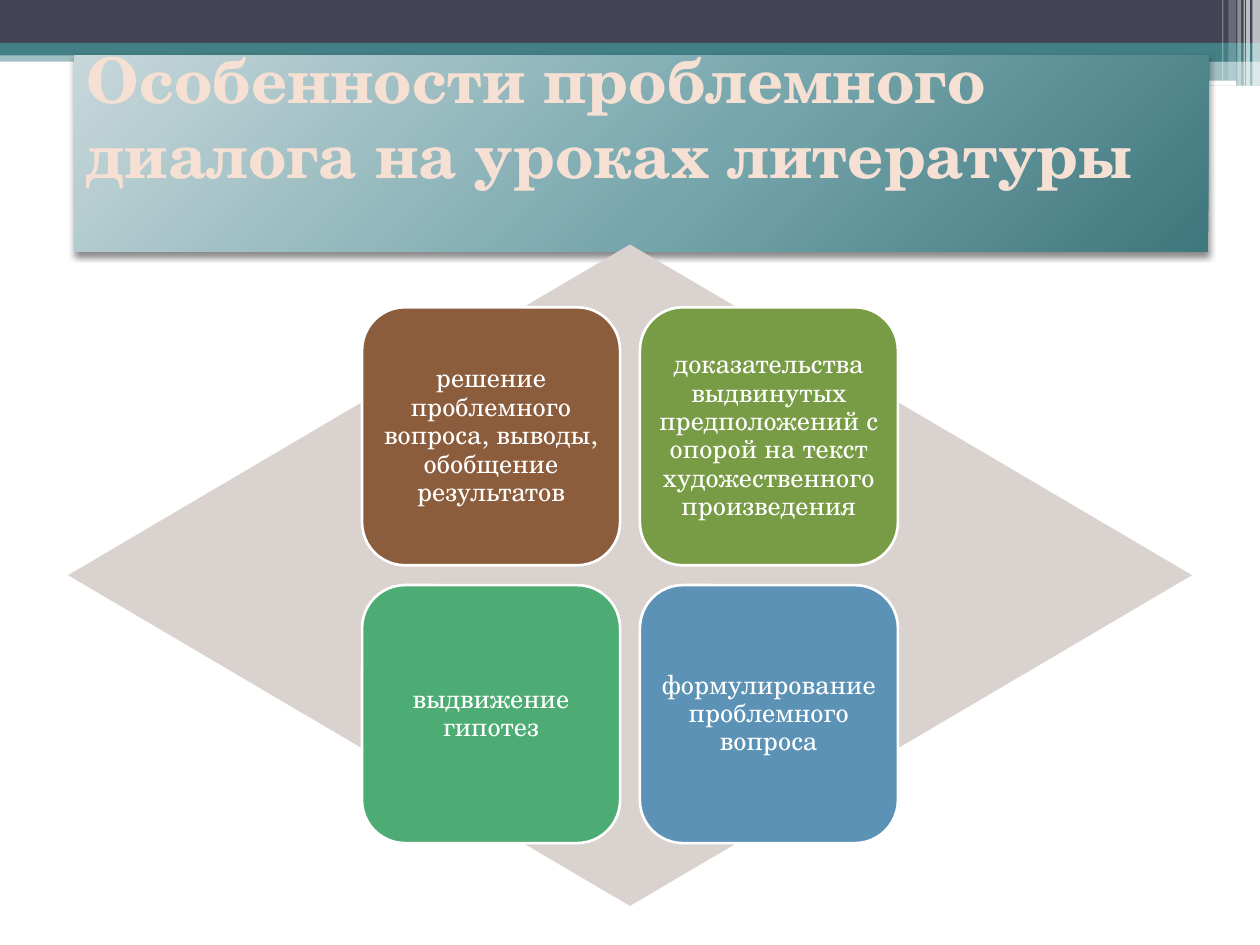
import lxml.etree
import pptx
import pptx.dml.color
import pptx.enum.shapes
import pptx.enum.text
import pptx.oxml
import pptx.oxml.ns
import pptx.util

UNIT = pptx.util.Inches(0.01)
COLUMNS, ROWS = 1000, 750
FONT = "TeX Gyre Schola"
FORMS = pptx.enum.shapes.MSO_SHAPE
ALIGN = pptx.enum.text.PP_ALIGN
MIDDLE = pptx.enum.text.MSO_ANCHOR.MIDDLE
DRAWING = 'xmlns:a="http://schemas.openxmlformats.org/drawingml/2006/main"'

BARS = [
    (0, 40, 1000, 9, "438086", 50, FORMS.RECTANGLE),
    (0, 0, 1000, 34, "424456", 100, FORMS.RECTANGLE),
    (0, 34, 1000, 10, "438086", 100, FORMS.RECTANGLE),
    (592, 39, 408, 10, "438086", 100, FORMS.RECTANGLE),
    (592, 48, 408, 20, "438086", 50, FORMS.RECTANGLE),
    (591, 54, 335, 3, "FFFFFF", 100, FORMS.ROUNDED_RECTANGLE),
    (806, 64, 175, 4, "FFFFFF", 100, FORMS.ROUNDED_RECTANGLE),
]
STRIPES = [(994, 6, 68, 65), (989, 3, 68, 65), (987, 1, 68, 60),
           (982, 3, 68, 40), (975, 6, 64, 20), (970, 1, 64, 30)]
TILES = [
    ("решение проблемного вопроса, выводы, обобщение результатов", "8B5D3D"),
    ("доказательства выдвинутых предположений с опорой на текст "
     "художественного произведения", "789B45"),
    ("выдвижение гипотез", "4DAC73"),
    ("формулирование проблемного вопроса", "5C92B5"),
]


def colour(code):
    """Turn a hex string into a colour."""
    return pptx.dml.color.RGBColor.from_string(code)


def grid(*cells):
    """Turn grid columns and rows into slide lengths."""
    return [round(cell * UNIT) for cell in cells]


def apply(target, values):
    """Set each named attribute of the target."""
    for name, value in values.items():
        setattr(target, name, value)


def add_form(shapes, kind, box, fill, opacity=100):
    """Add a flat, borderless preset shape."""
    form = shapes.add_shape(kind, *grid(*box))
    form.shadow.inherit = False
    form.fill.solid()
    form.fill.fore_color.rgb = colour(fill)
    form.line.fill.background()
    if opacity < 100:
        tint = form.fill._xPr.find(".//" + pptx.oxml.ns.qn("a:srgbClr"))
        alpha = lxml.etree.SubElement(tint, pptx.oxml.ns.qn("a:alpha"))
        alpha.set("val", str(opacity * 1000))
    return form


def write(form, text, frame_format, para_format, font_format, ink):
    """Write one formatted paragraph into a shape."""
    frame = form.text_frame
    apply(frame, frame_format)
    para = frame.paragraphs[0]
    apply(para, para_format)
    span = para.add_run()
    span.text = text
    apply(span.font, font_format)
    span.font.color.rgb = colour(ink)


def build_header(page):
    """Draw the bars across the top and the stripes at the right edge."""
    for left, top, width, height, fill, opacity, kind in BARS:
        add_form(page.shapes, kind, (left, top, width, height), fill, opacity)
    for left, width, height, opacity in STRIPES:
        add_form(page.shapes, FORMS.RECTANGLE, (left, 0, width, height), "FFFFFF", opacity)


def build_title(page, box):
    """Place the title placeholder with its gradient and shadow above the bars."""
    title = page.shapes.title
    page.shapes._spTree.append(title._element)
    apply(title, dict(zip(("left", "top", "width", "height"), grid(*box))))
    stops = "".join(
        f'<a:gs pos="{place * 1000}"><a:srgbClr val="{code}"/></a:gs>'
        for place, code in ((0, "C7D7DA"), (55, "77A7AD"), (100, "3E777D")))
    gradient = (
        f'<a:gradFill {DRAWING} rotWithShape="1"><a:gsLst>{stops}</a:gsLst>'
        '<a:path path="circle"><a:fillToRect l="-40000" t="-90000" r="140000" b="190000"/>'
        '</a:path></a:gradFill>')
    shadow = (
        f'<a:effectLst {DRAWING}><a:outerShdw blurRad="50800" dist="25400" dir="5400000" '
        'rotWithShape="0"><a:srgbClr val="000000"><a:alpha val="45000"/></a:srgbClr>'
        '</a:outerShdw></a:effectLst>')
    for part in (gradient, shadow):
        title._element.spPr.append(pptx.oxml.parse_xml(part))
    write(title, "Особенности проблемного диалога на уроках литературы",
          {"vertical_anchor": MIDDLE, "word_wrap": True, "margin_top": 0,
           "margin_bottom": pptx.util.Inches(0.6),
           "auto_size": pptx.enum.text.MSO_AUTO_SIZE.NONE},
          {"alignment": ALIGN.LEFT},
          {"size": pptx.util.Pt(36), "name": FONT, "bold": True}, "F5E0D3")


def build_matrix(page, box):
    """Draw a diamond with four tiles in a centred square."""
    left, top, width, height = box
    group = page.shapes.add_group_shape()
    add_form(group.shapes, FORMS.DIAMOND, box, "DAD2CE")
    side, edge, step = 0.39 * height, 0.095 * height, 0.42 * height
    start = left + (width - height) / 2 + edge
    for index, (text, fill) in enumerate(TILES):
        row, column = divmod(index, 2)
        place = (start + column * step, top + edge + row * step, side, side)
        tile = add_form(group.shapes, FORMS.ROUNDED_RECTANGLE, place, fill)
        tile.line.color.rgb = colour("FFFFFF")
        tile.line.width = pptx.util.Pt(1.5)
        inset = pptx.util.Inches(0.02)
        write(tile, text,
              {"vertical_anchor": MIDDLE, "word_wrap": True,
               "margin_left": inset, "margin_right": inset,
               "margin_top": inset, "margin_bottom": inset},
              {"alignment": ALIGN.CENTER, "line_spacing": 0.9},
              {"size": pptx.util.Pt(15), "name": FONT}, "FFFFFF")


def main():
    """Build and save the one-slide deck."""
    deck = pptx.Presentation()
    deck.slide_width, deck.slide_height = grid(COLUMNS, ROWS)
    page = deck.slides.add_slide(deck.slide_layouts[5])
    build_header(page)
    build_title(page, (59, 44, 900, 156))
    build_matrix(page, (54, 194, 892, 525))
    deck.save("out.pptx")


if __name__ == "__main__":
    main()
